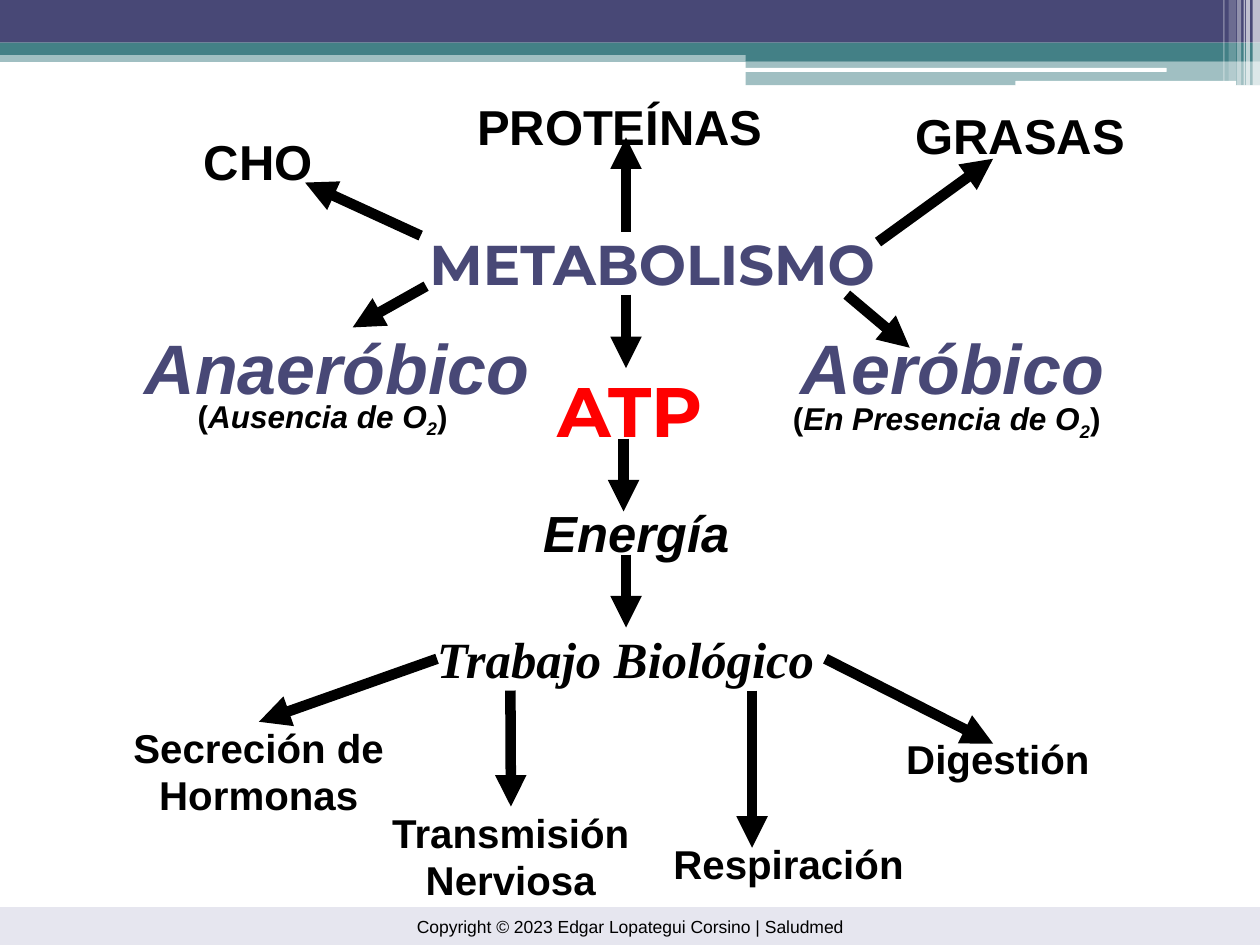
"""Builds the metabolism concept map slide."""
import pptx
import pptx.dml.color
import pptx.enum.shapes
import pptx.enum.text
import pptx.oxml
import pptx.oxml.ns
import pptx.util

Cm, Pt = pptx.util.Cm, pptx.util.Pt
SHAPE = pptx.enum.shapes.MSO_SHAPE
MIDDLE = pptx.enum.text.MSO_ANCHOR.MIDDLE
CENTER = pptx.enum.text.PP_ALIGN.CENTER
NAVY, TEAL, WHITE, BLACK, RED = "484876", "438086", "FFFFFF", "000000", "FF0000"

BANDS = [
    (SHAPE.RECTANGLE, 0, 1.02, 25.4, 0.23, TEAL, 50),
    (SHAPE.RECTANGLE, 0, 0, 25.4, 0.86, NAVY, 100),
    (SHAPE.RECTANGLE, 0, 0.86, 25.4, 0.25, TEAL, 100),
    (SHAPE.RECTANGLE, 15.03, 0.98, 10.37, 0.25, TEAL, 100),
    (SHAPE.RECTANGLE, 15.03, 1.22, 10.37, 0.5, TEAL, 50),
    (SHAPE.ROUNDED_RECTANGLE, 15.01, 1.37, 8.51, 0.08, WHITE, 100),
    (SHAPE.ROUNDED_RECTANGLE, 20.47, 1.63, 4.45, 0.1, WHITE, 100),
    (SHAPE.RECTANGLE, 25.25, 0, 0.15, 1.73, WHITE, 65),
    (SHAPE.RECTANGLE, 25.12, 0, 0.08, 1.73, WHITE, 65),
    (SHAPE.RECTANGLE, 25.07, 0, 0.03, 1.73, WHITE, 60),
    (SHAPE.RECTANGLE, 24.94, 0, 0.08, 1.73, WHITE, 40),
    (SHAPE.RECTANGLE, 24.77, 0, 0.15, 1.63, WHITE, 20),
    (SHAPE.RECTANGLE, 24.66, 0, 0.03, 1.63, WHITE, 30),
]
FOOTER = "Copyright © 2023 Edgar Lopategui Corsino | Saludmed"

LABELS = [
    (["ATP"], 10.49, 7.39, 4.42, 1.3, 40, "Montserrat", RED, False, 0.9),
    (["CHO"], 3.2, 2.64, 4.01, 1.07, 28, "Arial", BLACK, False, 0.8),
    (["PROTEÍNAS"], 9.22, 1.93, 6.55, 1.07, 28, "Arial", BLACK, False, 0.8),
    (["GRASAS"], 17.81, 2.11, 5.51, 1.07, 28, "Arial", BLACK, False, 0.8),
    (["Energía"], 10.29, 10.11, 5.08, 1.07, 29, "Arial", BLACK, True, 0.8),
    (["Trabajo Biológico"], 5.21, 12.65, 14.81, 1.07, 29, "Times New Roman", BLACK, True, 0.8),
    (["Secreción de", "Hormonas"], 1.83, 14.55, 6.78, 1.91, 23, "Arial", BLACK, False, 0.8),
    (["Transmisión", "Nerviosa"], 6.91, 16.26, 6.78, 1.91, 23, "Arial", BLACK, False, 0.8),
    (["Respiración"], 13.26, 16.89, 5.28, 0.84, 23, "Arial", BLACK, False, 0.8),
    (["Digestión"], 17.48, 14.76, 5.28, 0.84, 23, "Arial", BLACK, False, 0.8),
    (["Aeróbico"], 15.72, 6.58, 6.96, 1.07, 40, "Arial", NAVY, True, 0.8),
    (["Anaeróbico"], 2.31, 6.58, 8.97, 1.07, 40, "Arial", NAVY, True, 0.8),
]
OXYGEN_NOTES = [
    ("Ausencia de O", 3.71, 7.87, 5.59, 1.02),
    ("En Presencia de O", 15.72, 7.92, 6.73, 1.02),
]
ARROWS = [
    (8.48, 4.75, 6.15, 3.68, None),
    (12.62, 4.67, 12.62, 2.77, None),
    (17.7, 4.88, 20.02, 3.2, None),
    (12.62, 5.94, 12.62, 7.42, None),
    (12.57, 8.84, 12.57, 10.31, None),
    (12.62, 11.18, 12.62, 12.65, None),
    (8.81, 13.28, 5.21, 14.55, "Secreción de"),
    (10.29, 13.92, 10.29, 16.26, "Transmisión"),
    (15.16, 13.92, 15.16, 17.09, None),
    (16.64, 13.28, 20.02, 14.99, None),
    (17.07, 5.94, 18.34, 7.01, None),
    (8.59, 5.77, 7.11, 6.6, None),
]


def rgb(value):
    return pptx.dml.color.RGBColor.from_string(value)


def add_xml(parent, tag, **attrs):
    el = pptx.oxml.parse_xml(f"<a:{tag} {pptx.oxml.ns.nsdecls('a')}/>")
    for name, value in attrs.items():
        el.set(name, value)
    parent.append(el)


def add_band(s, kind, x, y, w, h, color, opacity):
    sp = s.shapes.add_shape(kind, Cm(x), Cm(y), Cm(w), Cm(h))
    sp.shadow.inherit = False
    sp.fill.solid()
    sp.fill.fore_color.rgb = rgb(color)
    sp.line.fill.background()
    if opacity < 100:
        clr = sp.fill._xPr.find(".//" + pptx.oxml.ns.qn("a:srgbClr"))
        add_xml(clr, "alpha", val=str(opacity * 1000))
    return sp


def style(p, size, font, color, bold=True, italic=None):
    p.alignment = CENTER
    p.font.size = Pt(size)
    p.font.name = font
    p.font.bold = bold
    p.font.italic = italic
    p.font.color.rgb = rgb(color)


def add_box(s, x, y, w, h, wrap=True):
    sp = s.shapes.add_textbox(Cm(x), Cm(y), Cm(w), Cm(h))
    sp.text_frame.word_wrap = wrap
    return sp


def add_label(s, lines, x, y, w, h, size, font, color, italic, spacing):
    sp = add_box(s, x, y, w, h)
    tf = sp.text_frame
    tf.margin_top = Cm(0.13 + 0.02 * (1 - spacing) * size)
    tf.text = "\n".join(lines)
    for i, p in enumerate(tf.paragraphs):
        style(p, size, font, color, italic=italic)
        p.line_spacing = spacing
        if i:
            p.space_before = Pt(5)
    return sp


def add_oxygen_note(s, text, *place):
    tf = add_box(s, *place, wrap=False).text_frame
    tf.auto_size = pptx.enum.text.MSO_AUTO_SIZE.SHAPE_TO_FIT_TEXT
    p = tf.paragraphs[0]
    style(p, 18, "Arial", BLACK)
    for part, italic in (("(", False), (text, True), ("2", True), (")", False)):
        r = p.add_run()
        r.text = part
        r.font.italic = italic
        if part == "2":
            r._r.get_or_add_rPr().set("baseline", "-25000")


def add_arrow(s, x1, y1, x2, y2, target):
    sp = s.shapes.add_connector(
        pptx.enum.shapes.MSO_CONNECTOR.STRAIGHT, Cm(x1), Cm(y1), Cm(x2), Cm(y2))
    sp.line.width = Pt(6)
    sp.line.color.rgb = rgb(BLACK)
    add_xml(sp.line._get_or_add_ln(), "tailEnd", type="triangle")
    add_xml(sp._element.spPr, "effectLst")
    if target is not None:
        sp.end_connect(target, 0)


def main():
    prs = pptx.Presentation()
    prs.slide_width, prs.slide_height = Cm(25.4), Cm(19.05)
    s = prs.slides.add_slide(prs.slide_layouts[6])
    for band in BANDS:
        add_band(s, *band)

    tf = add_band(s, SHAPE.RECTANGLE, 0, 18.29, 25.4, 0.76, "E6E6EF", 100).text_frame
    tf.vertical_anchor = MIDDLE
    tf.text = FOOTER
    style(tf.paragraphs[0], 10, "Arial", BLACK, bold=False)

    tf = add_box(s, 7.75, 4.24, 10.8, 2.11).text_frame
    tf.vertical_anchor = MIDDLE
    tf.text = "METABOLISMO"
    style(tf.paragraphs[0], 32, "Montserrat", NAVY)

    labels = {label[0][0]: add_label(s, *label) for label in LABELS}
    for note in OXYGEN_NOTES:
        add_oxygen_note(s, *note)
    for *ends, target in ARROWS:
        add_arrow(s, *ends, labels.get(target))
    prs.save("out.pptx")


if __name__ == "__main__":
    main()
